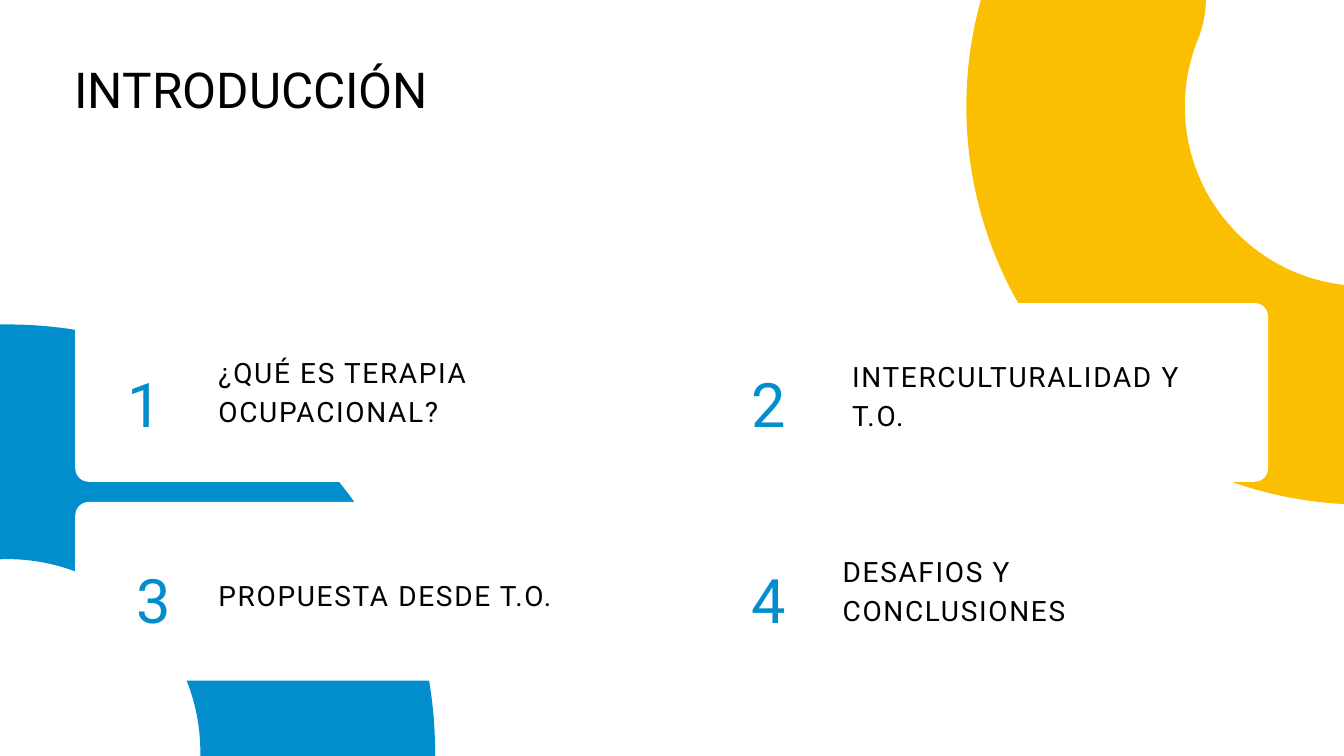
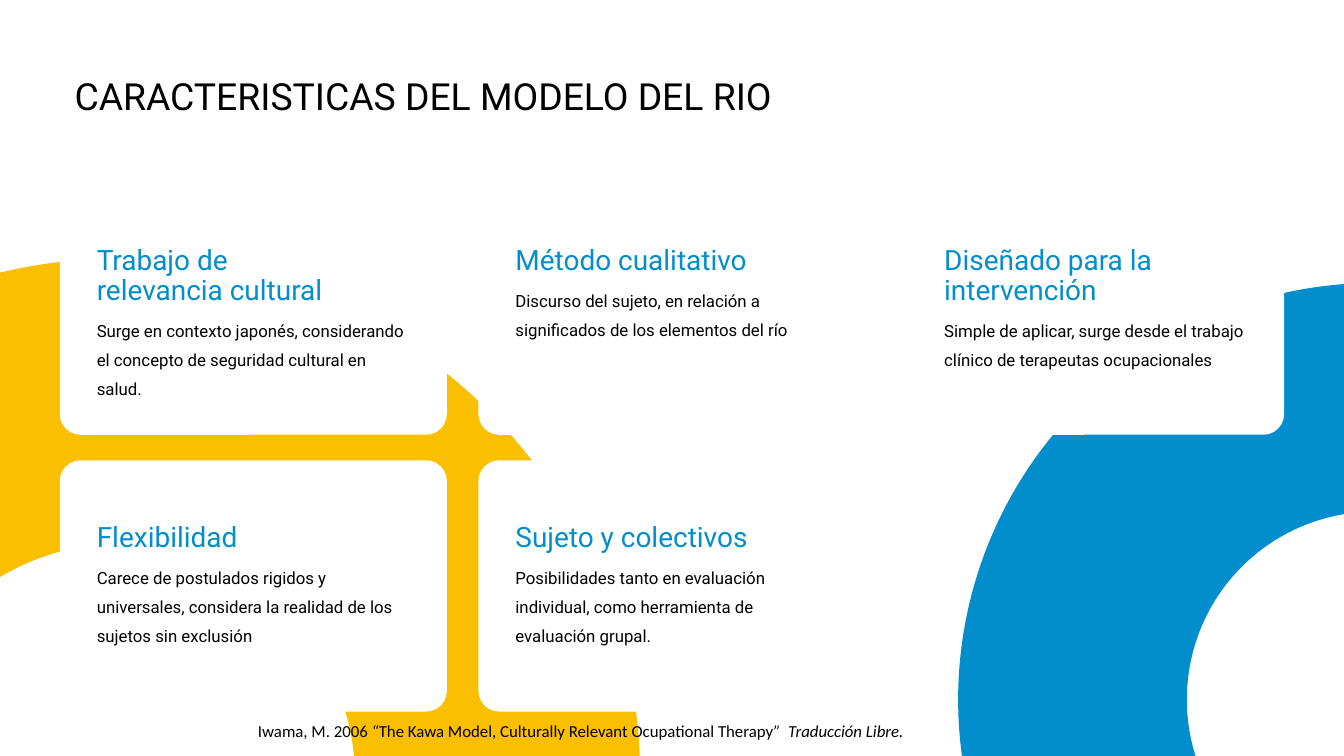
from dataclasses import dataclass
from itertools import pairwise
from math import cos, radians, sin, tan

from lxml.etree import SubElement as Sub
from pptx import Presentation
from pptx.dml.color import RGBColor as Rgb
from pptx.enum.shapes import MSO_SHAPE as Kind
from pptx.enum.text import MSO_AUTO_SIZE as Fit, PP_ALIGN as Align
from pptx.oxml.ns import qn
from pptx.util import Pt

COLS, ROWS = 20, 11.25


@dataclass(frozen=True)
class Theme:
    """Colours, fonts and type styles as size, leading and tracking in points."""
    blue: str = "028ECC"
    gold: str = "FBBF02"
    white: str = "FFFFFF"
    black: str = "000000"
    font: str = "Roboto"
    serif: str = "Calibri"
    title: tuple = (53, 74.2, 0)
    small: tuple = (40, 56, 0)
    digit: tuple = (65.7, 111.7, 3.9)
    label: tuple = (30, 42, 1.8)
    head: tuple = (30, 32.1, 0)
    body: tuple = (18, 31, 0)
    note: int = 18


def arc(x, y, rad, *stops):
    """List the Bezier points after the start of an arc through the given angles."""
    dots = []
    for first, last in pairwise(map(radians, stops)):
        pull = 4 / 3 * tan((last - first) / 4)
        for angle, lean in ((first, pull), (last, -pull), (last, 0)):
            dots.append((x + rad * (cos(angle) - lean * sin(angle)),
                         y + rad * (sin(angle) + lean * cos(angle))))
    return dots


class Deck:
    """Draws styled elements on the current slide, on a grid of columns and rows."""

    def __init__(self, theme):
        """Open a wide deck with the given theme."""
        self.theme = theme
        self.prs = Presentation()
        self.prs.slide_width = Pt(COLS * 72)
        self.prs.slide_height = Pt(ROWS * 72)
        self.unit = self.prs.slide_width / COLS
        self.slide = None

    def grid(self, *cells):
        """Turn grid lengths into slide lengths."""
        return [round(cell * self.unit) for cell in cells]

    def page(self):
        """Start a blank white slide."""
        self.slide = self.prs.slides.add_slide(self.prs.slide_layouts[6])
        self.slide.background.fill.solid()
        self.slide.background.fill.fore_color.rgb = Rgb.from_string(self.theme.white)

    def paint(self, shape, color):
        """Fill a shape flat, without line or shadow."""
        shape.shadow.inherit = False
        shape.fill.solid()
        shape.fill.fore_color.rgb = Rgb.from_string(color)
        shape.line.fill.background()

    def ring(self, x, y, wide, turn, color):
        """Draw an open ring with round ends, turned about the middle of its box."""
        size = wide * 0.511
        inner = size * 0.451
        mid, cap = (size + inner) / 2, (size - inner) / 2
        y += size * 0.486
        side, rise = mid * cos(radians(23)), y - mid * sin(radians(23))
        dots = (arc(x - side, rise, cap, 90, 112.5, 203)
                + arc(x, y, size, 203, 270, 337)
                + arc(x + side, rise, cap, -23, 67, 157)
                + arc(x, y, inner, 337, 270, 203)
                + arc(x - side, rise, cap, 23, 90))
        dots = [self.grid(*dot) for dot in dots]
        pen = self.slide.shapes.build_freeform(*dots[-1])
        pen.add_line_segments(dots, close=True)
        shape = pen.convert_to_shape()
        self.bend(shape)
        shape.rotation = turn
        self.paint(shape, color)

    def bend(self, shape):
        """Turn each three line steps of an outline into one curve."""
        trail = next(shape._element.iter(qn("a:path")))
        steps = trail.findall(qn("a:lnTo"))
        close = trail.find(qn("a:close"))
        trail.remove(close)
        for start in range(0, len(steps), 3):
            curve = Sub(trail, qn("a:cubicBezTo"))
            for step in steps[start:start + 3]:
                curve.append(step[0])
                trail.remove(step)
        trail.append(close)

    def card(self, x, y, wide, high, curve):
        """Draw a white card with round corners."""
        box = self.slide.shapes.add_shape(
            Kind.ROUNDED_RECTANGLE, *self.grid(x, y, wide, high))
        box.adjustments[0] = curve / high
        self.paint(box, self.theme.white)

    def frame(self, x, y, wide, high):
        """Add a wrapping text box that grows and return its frame."""
        frame = self.slide.shapes.add_textbox(*self.grid(x, y, wide, high)).text_frame
        frame.word_wrap = True
        frame.auto_size = Fit.SHAPE_TO_FIT_TEXT
        return frame

    def style(self, run, size, color, font):
        """Set the type of one run."""
        run.font.size = Pt(size)
        run.font.name = font
        run.font.color.rgb = Rgb.from_string(color)

    def text(self, words, x, y, wide, kind, color=None, lines=1, align=None):
        """Add plain text in one of the type styles."""
        size, lead, track = kind
        frame = self.frame(x, y, wide, lines * lead / 72)
        frame.margin_left = frame.margin_right = 0
        frame.margin_top = frame.margin_bottom = 0
        frame.text = words
        para = frame.paragraphs[0]
        para.line_spacing = Pt(lead)
        para.alignment = align
        run = para.runs[0]
        self.style(run, size, color or self.theme.black, self.theme.font)
        if track:
            run._r.get_or_add_rPr().set("spc", str(round(track * 100)))

    def cite(self, parts, x, y, wide, high):
        """Add a source line of upright and slanted parts."""
        para = self.frame(x, y, wide, high).paragraphs[0]
        para.alignment = Align.JUSTIFY
        para.line_spacing = 1.1
        for words, slant in parts:
            run = para.add_run()
            run.text = words
            self.style(run, self.theme.note, self.theme.black, self.theme.serif)
            run.font.italic = slant

    def topic(self, x, y, head, lines, body, rows):
        """Add a blue heading with its text below."""
        look = self.theme
        self.text(head, x, y, 3.82, look.head, look.blue, lines)
        self.text(body, x, y + 0.1 + 0.44 * lines, 4.66, look.body, lines=rows)


def intro(deck):
    """Build the agenda slide."""
    look = deck.theme
    deck.page()
    sides = [(1.12, (1.89, 8.66, 12.45, 35.1, look.blue)),
             (10.23, (18.27, 3.62, 11.59, 225, look.gold))]
    for x, ring in sides:
        deck.ring(*ring)
        for y in (4.51, 7.47):
            deck.card(x, y, 8.64, 2.66, 0.2)
    items = [
        ("1", 1.68, 5, 0.73, "¿QUÉ ES TERAPIA OCUPACIONAL?", 3.25, 5.21, 5.06, 2),
        ("2", 10.73, 5, 0.96, "INTERCULTURALIDAD Y T.O.", 12.68, 5.26, 5.31, 2),
        ("3", 1.68, 7.91, 0.86, "PROPUESTA DESDE T.O.", 3.25, 8.53, 5.19, 1),
        ("4", 10.73, 7.91, 0.96, "DESAFIOS Y CONCLUSIONES", 12.54, 8.17, 5.46, 2),
    ]
    for digit, left, top, span, label, x, y, wide, lines in items:
        deck.text(digit, left, top, span, look.digit, look.blue, align=Align.RIGHT)
        deck.text(label, x, y, wide, look.label, lines=lines)
    deck.text("INTRODUCCIÓN", 1.11, 0.73, 9.12, look.title)


def model(deck):
    """Build the slide on the traits of the river model."""
    look = deck.theme
    deck.page()
    deck.ring(3.27, 8.12, 15.13, 23.1, look.gold)
    deck.ring(18.4, 8.21, 12.13, 316.9, look.blue)
    topics = [
        (0, 0, 0.55, "Trabajo de relevancia cultural", 2,
         "Surge en contexto japonés, considerando el concepto de "
         "seguridad cultural en salud.", 3),
        (0, 1, 0.55, "Flexibilidad", 1,
         "Carece de postulados rigidos y universales, considera "
         "la realidad de los sujetos sin exclusión", 3),
        (1, 0, 0.55, "Método cualitativo", 1,
         "Discurso del sujeto, en relación a significados de los "
         "elementos del río", 2),
        (1, 1, 0.55, "Sujeto y colectivos", 1,
         "Posibilidades tanto en evaluación individual, como "
         "herramienta de evaluación grupal.", 3),
        (2, 0, 0.7, "Diseñado para la intervención", 2,
         "Simple de aplicar, surge desde el trabajo clínico de "
         "terapeutas ocupacionales", 2),
    ]
    for col, row, inset, head, lines, body, rows in topics:
        x, y = 0.89 + 6.23 * col, 2.73 + 4.12 * row
        deck.card(x, y, 5.76, 3.74, 0.31)
        deck.topic(x + inset, y + 0.93, head, lines, body, rows)
    deck.text("CARACTERISTICAS DEL MODELO DEL RIO", 1.11, 0.98, 13.56, look.small)
    deck.cite([
        ("Iwama, M. 2006 ", False),
        ("“", True),
        ("The Kawa Model, Culturally Relevant Ocupational Therapy", False),
        ("”  Traducción Libre.", True),
    ], 3.74, 10.65, 14.86, 0.42)


def main():
    """Build and save the deck."""
    deck = Deck(Theme())
    intro(deck)
    model(deck)
    deck.prs.save("out.pptx")


if __name__ == "__main__":
    main()
